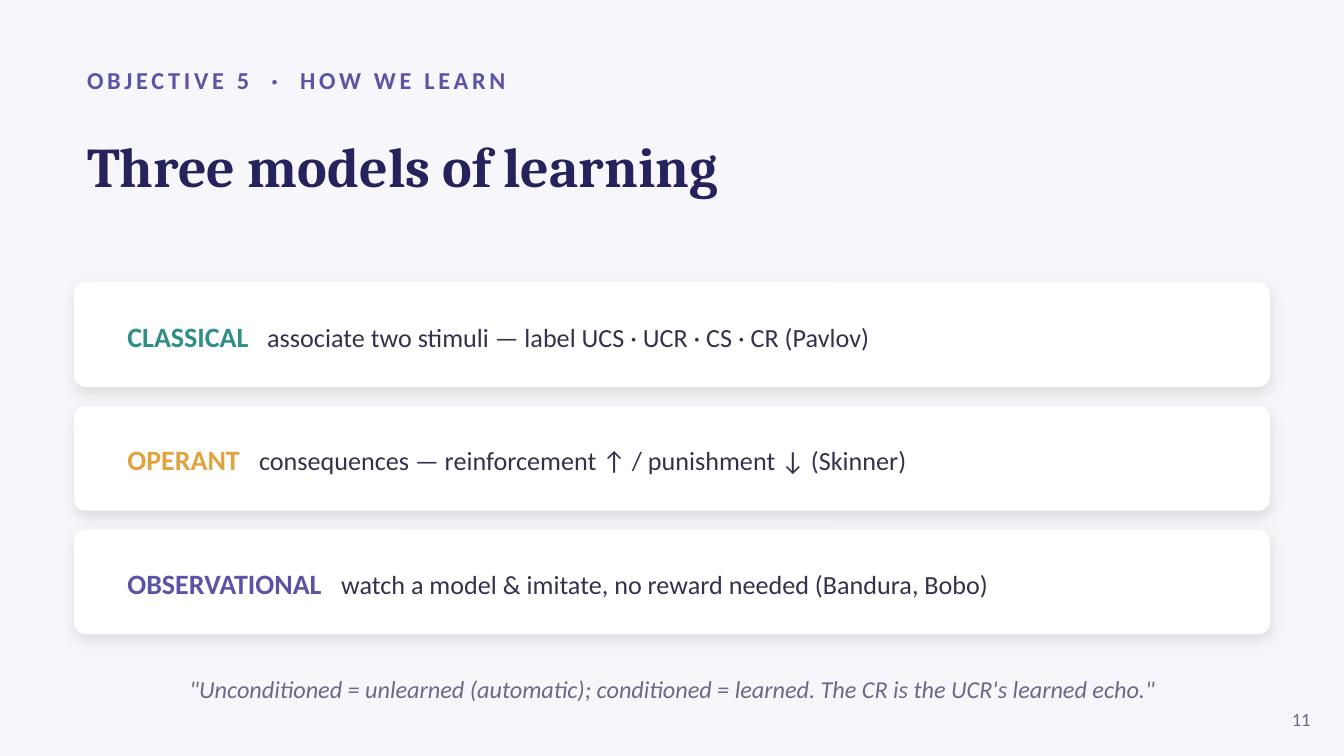
from lxml import etree
from pptx import Presentation
from pptx.dml.color import RGBColor
from pptx.enum import shapes, text
from pptx.oxml.ns import qn
from pptx.util import Inches, Pt

VIOLET, NAVY, GREY, INK = "5B53A6", "26235C", "6B6A86", "33324A"
TEAL, AMBER, WHITE, PALE = "2F8F86", "E0A33E", "FFFFFF", "F7F7FB"
MODELS = [
    ("CLASSICAL", TEAL, 1.04,
     "associate two stimuli — label UCS · UCR · CS · CR (Pavlov)"),
    ("OPERANT", AMBER, 0.98,
     "consequences — reinforcement ↑ / punishment ↓ (Skinner)"),
    ("OBSERVATIONAL", VIOLET, 1.59,
     "watch a model & imitate, no reward needed (Bandura, Bobo)"),
]
SLIDE_WIDTH = 10
LEFT, WIDTH = 0.55, 8.9
CARD_TOP, CARD_HEIGHT, CARD_STEP = 2.1, 0.78, 0.92


def paint(color_holder, color):
    color_holder.rgb = RGBColor.from_string(color)


def fill_solid(fill, color):
    fill.solid()
    paint(fill.fore_color, color)


def add_line(slide, left, top, width, height, align=text.PP_ALIGN.LEFT):
    frame = slide.shapes.add_textbox(
        Inches(left), Inches(top), Inches(width), Inches(height)).text_frame
    frame.word_wrap = True
    frame.vertical_anchor = text.MSO_ANCHOR.MIDDLE
    line = frame.paragraphs[0]
    line.alignment = align
    return line


def add_run(line, words, size, color, bold=False, italic=False,
            face="Calibri", spacing=0):
    run = line.add_run()
    run.text = words
    font = run.font
    font.name, font.size, font.bold, font.italic = face, Pt(size), bold, italic
    paint(font.color, color)
    if spacing:
        font._element.set("spc", str(spacing * 100))


def add_tab_stop(line, position):
    stops = etree.SubElement(line._p.get_or_add_pPr(), qn("a:tabLst"))
    etree.SubElement(stops, qn("a:tab"), pos=str(Inches(position)), algn="l")


def add_soft_shadow(shape):
    shape.shadow.inherit = False
    effects = shape._element.spPr.find(qn("a:effectLst"))
    shadow = etree.SubElement(
        effects, qn("a:outerShdw"), blurRad=str(Pt(7)), dist=str(Pt(3)),
        dir=str(90 * 60000), algn="ctr", rotWithShape="0")
    tint = etree.SubElement(shadow, qn("a:srgbClr"), val="000000")
    etree.SubElement(tint, qn("a:alpha"), val="10000")


def add_model_card(slide, top, model, color, gap_end, summary):
    card = slide.shapes.add_shape(
        shapes.MSO_SHAPE.ROUNDED_RECTANGLE, Inches(LEFT), Inches(top),
        Inches(WIDTH), Inches(CARD_HEIGHT))
    card.adjustments[0] = 0.115
    fill_solid(card.fill, WHITE)
    card.line.fill.background()
    add_soft_shadow(card)
    line = add_line(slide, LEFT + 0.3, top + 0.1, WIDTH - 0.6, 0.6)
    add_tab_stop(line, gap_end)
    add_run(line, model + "\t", 15, color, bold=True)
    add_run(line, summary, 14, INK)


def add_heading(slide):
    objective = add_line(slide, LEFT, 0.42, 9, 0.35)
    for words, spacing in [("OBJECTIVE 5", 2), (" ", 7), ("·", 2),
                           (" ", 7), ("HOW WE LEARN", 2)]:
        add_run(objective, words, 13, VIOLET, bold=True, spacing=spacing)
    title = add_line(slide, LEFT, 0.78, WIDTH, 0.9)
    add_run(title, "Three models of learning", 30, NAVY, bold=True,
            face="Cambria")


def add_closing(slide):
    quote = add_line(slide, LEFT, 4.95, WIDTH, 0.35, text.PP_ALIGN.CENTER)
    add_run(quote, '"Unconditioned = unlearned (automatic); conditioned = '
            'learned. The CR is the UCR\'s learned echo."',
            13, GREY, italic=True)
    page_number = add_line(slide, 9.35, 5.2, 0.5, 0.3, text.PP_ALIGN.RIGHT)
    add_run(page_number, "11", 10, GREY)


def main():
    deck = Presentation()
    deck.slide_width = Inches(SLIDE_WIDTH)
    deck.slide_height = Inches(SLIDE_WIDTH * 9 / 16)
    slide = deck.slides.add_slide(deck.slide_layouts[6])
    fill_solid(slide.background.fill, PALE)
    add_heading(slide)
    for row, model in enumerate(MODELS):
        add_model_card(slide, CARD_TOP + row * CARD_STEP, *model)
    add_closing(slide)
    deck.save("out.pptx")


if __name__ == "__main__":
    main()
